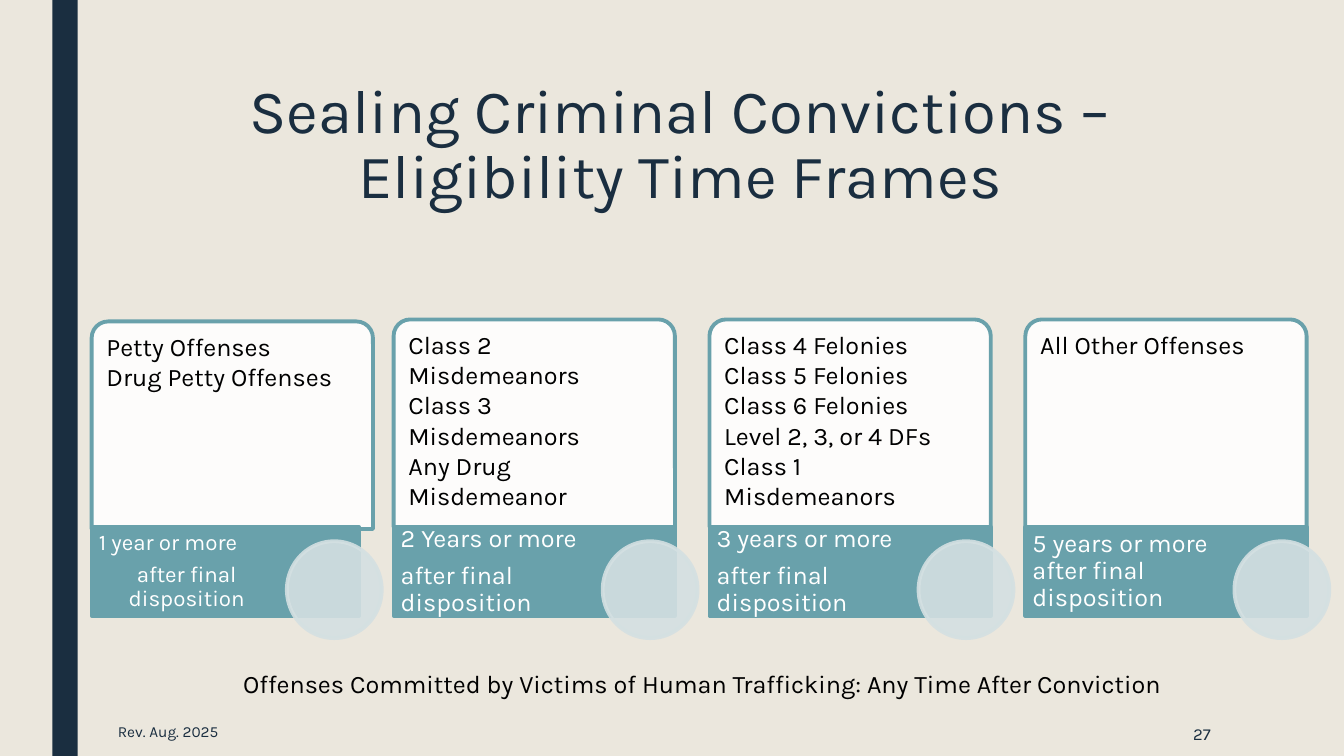
from pptx import Presentation
from pptx.dml.color import RGBColor
from pptx.enum.shapes import MSO_SHAPE
from pptx.enum.text import MSO_ANCHOR, PP_ALIGN
from pptx.oxml.ns import qn
from pptx.util import Cm, Pt
from lxml.etree import SubElement

NAVY, TEAL, MIST, SAND = "1A2E40", "69A1AB", "D4E0E2", "EBE7DD"
LEFT, MID, RIGHT = PP_ALIGN.LEFT, PP_ALIGN.CENTER, PP_ALIGN.RIGHT
AFTER = "after final disposition"


def color(code):
    return RGBColor.from_string(code)


def write(frame, lines, size, code, aligns=(LEFT,), ratio=1.0, gap=0):
    """Fill a text frame, one paragraph per line."""
    frame.word_wrap = True
    for i, line in enumerate(lines):
        para = frame.paragraphs[0] if i == 0 else frame.add_paragraph()
        para.alignment = aligns[min(i, len(aligns) - 1)]
        para.line_spacing = ratio
        para.space_before = Pt(0)
        para.space_after = Pt(gap)
        run = para.add_run()
        run.text = line
        run.font.name = "Karla"
        run.font.size = Pt(size)
        run.font.color.rgb = color(code)


def draw(slide, kind, box, fill, line=None, clear=0):
    """Add a flat shape; clear is how many of its colours are 90% opaque."""
    shape = slide.shapes.add_shape(kind, *map(Cm, box))
    shape.shadow.inherit = False
    shape.fill.solid()
    shape.fill.fore_color.rgb = color(fill)
    if line:
        shape.line.color.rgb = color(line)
        shape.line.width = Pt(2.75)
    else:
        shape.line.fill.background()
    tones = list(shape.element.spPr.iter(qn("a:srgbClr")))
    for tone in tones[:clear]:
        SubElement(tone, qn("a:alpha"), val="90000")
    return shape


def add_title(slide, box, text):
    title = slide.shapes.title
    title.left, title.top, title.width, title.height = map(Cm, box)
    title.text_frame.vertical_anchor = MSO_ANCHOR.TOP
    write(title.text_frame, [text], 44, NAVY, (MID,), 0.89)


def add_note(slide, box, text, size, code, align, anchor=MSO_ANCHOR.MIDDLE):
    note = slide.shapes.add_textbox(*map(Cm, box))
    note.text_frame.vertical_anchor = anchor
    write(note.text_frame, [text], size, code, (align,))


def add_card(slide, box, items, term, size=18, aligns=(LEFT,), drop=0, trim=0):
    """Offence list over a time bar with a disc; box spans list and bar."""
    x, y, w, h = box
    deep = 2.24
    # Offence list
    card = draw(slide, MSO_SHAPE.ROUND_2_SAME_RECTANGLE,
                (x, y + drop, w, h - deep), "FFFFFF", TEAL, 1)
    card.adjustments[0] = 0.08
    card.adjustments[1] = 0
    card.text_frame.vertical_anchor = MSO_ANCHOR.TOP
    write(card.text_frame, items, 18, "000000")
    # Time bar
    bar = draw(slide, MSO_SHAPE.RECTANGLE,
               (x, y + h - deep, w - trim, deep), TEAL, TEAL)
    frame = bar.text_frame
    frame.margin_left, frame.margin_right = Cm(0.18), Cm(2.13)
    frame.margin_top = frame.margin_bottom = 0
    frame.vertical_anchor = MSO_ANCHOR.MIDDLE
    write(frame, term, size, "FFFFFF", aligns, 0.9, 0.35 * size)
    # Disc
    draw(slide, MSO_SHAPE.OVAL,
         (x + w - trim - 1.82, y + h - 1.88, 2.39, 2.44), MIST, MIST, 2)


def add_cards(slide, box):
    x, y, w, h = box
    wide = 7.09
    step = 7.96
    # The first card stands apart from the even row
    add_card(slide, (x, y, wide, h), ["Petty Offenses", "Drug Petty Offenses"],
             ["1 year or more", AFTER], 16, (LEFT, MID), 0.05, 0.35)
    row = [
        (["Class 2 Misdemeanors", "Class 3 Misdemeanors",
          "Any Drug Misdemeanor"], ["2 Years or more", AFTER]),
        (["Class 4 Felonies", "Class 5 Felonies", "Class 6 Felonies",
          "Level 2, 3, or 4 DFs", "Class 1 Misdemeanors"],
         ["3 years or more", AFTER]),
        (["All Other Offenses"], ["5 years or more " + AFTER]),
    ]
    first = x + w - wide - 2 * step
    for i, (items, term) in enumerate(row):
        add_card(slide, (first + i * step, y, wide, h), items, term)


def main():
    deck = Presentation()
    deck.slide_width, deck.slide_height = Cm(33.87), Cm(19.05)
    slide = deck.slides.add_slide(deck.slide_layouts[5])
    slide.background.fill.solid()
    slide.background.fill.fore_color.rgb = color(SAND)

    # Side band and title
    draw(slide, MSO_SHAPE.RECTANGLE, (1.32, 0, 0.64, 19.05), NAVY)
    add_title(slide, (3.81, 1.9, 26.67, 4.12),
              "Sealing Criminal Convictions – Eligibility Time Frames")

    # Time frames
    add_cards(slide, (2.31, 8.05, 30.62, 7.47))

    # Closing line and footer
    add_note(slide, (4.75, 16.71, 25.9, 1.02),
             "Offenses Committed by Victims of Human Trafficking: "
             "Any Time After Conviction", 18, "000000", MID, MSO_ANCHOR.TOP)
    add_note(slide, (26.31, 17.93, 4.45, 1.12), "27", 12, NAVY, RIGHT)
    add_note(slide, (2.72, 17.88, 17.45, 1.12), "Rev. Aug. 2025", 11, NAVY, LEFT)
    deck.save("out.pptx")


if __name__ == "__main__":
    main()
